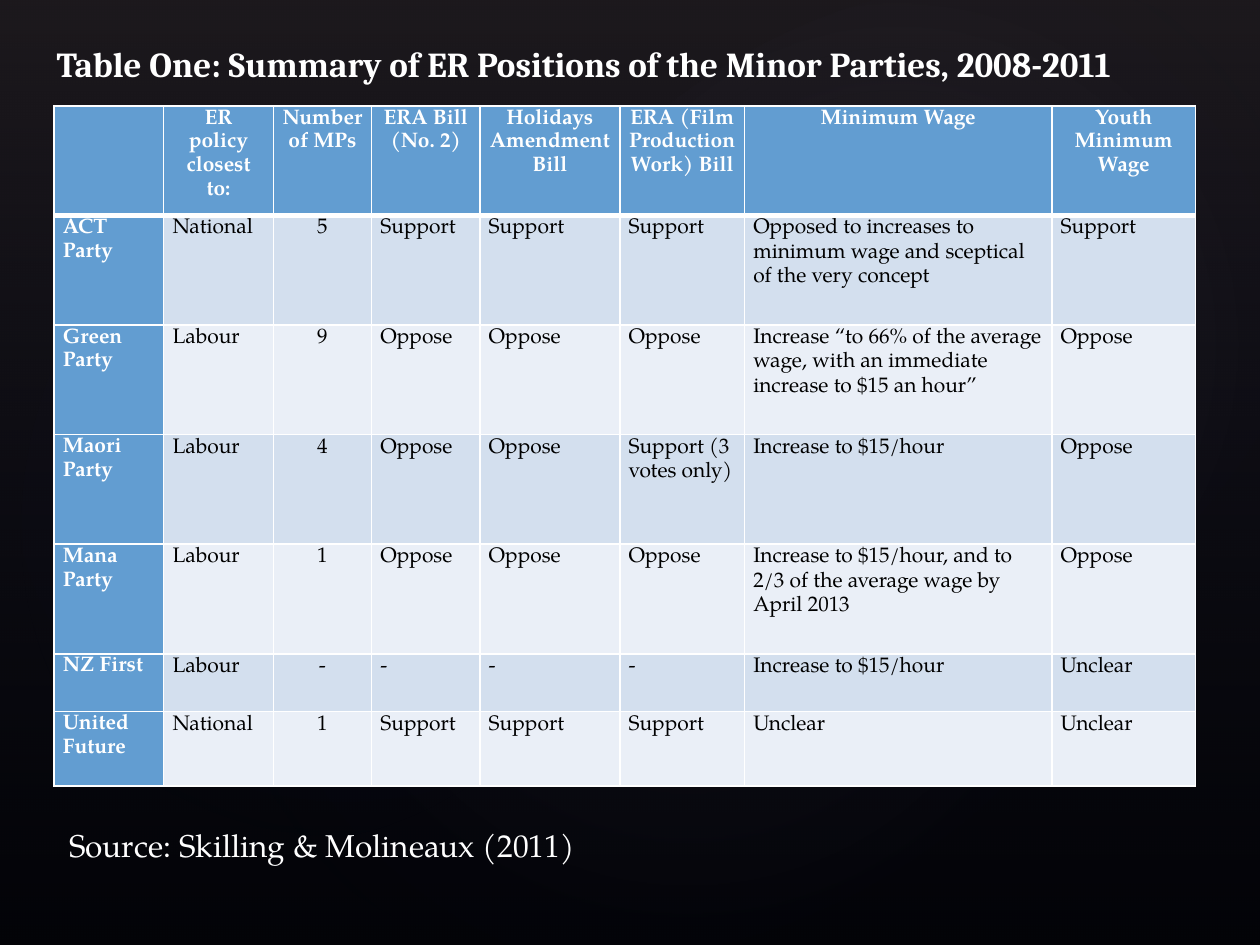
from pptx import Presentation
from pptx.dml.color import RGBColor
from pptx.enum.shapes import MSO_SHAPE as Shape
from pptx.enum.text import MSO_ANCHOR as Anchor, PP_ALIGN as Align
from pptx.oxml import parse_xml
from pptx.oxml.ns import nsdecls, qn
from pptx.util import Inches, Pt

COLORS = {
    "black": "000000", "white": "FFFFFF", "header": "629DD1",
    "odd": "D3DFEE", "even": "EAEFF7",
    "top": "504652", "navy": "242852", "glow": "C4BCC6",
}
BODY_FONT = "TeX Gyre Pagella"
TITLE_FONT = "Cambria"

LINEAR = '<a:lin ang="5400000" scaled="0"/>'
RADIAL = ('<a:path path="circle">'
          '<a:fillToRect l="50000" t="50000" r="50000" b="50000"/></a:path>')

# Left, top, width, height, rotation, opacity at the centre
GLOWS = [
    (1.5, 1.14, 7.92, 6.24, 328.7, 7),
    (-0.3, 1.28, 6.06, 4.9, 294.3, 8),
    (3.58, 0.13, 7.09, 5.2, 328.7, 8),
]

COLUMN_WIDTHS = [0.87, 0.87, 0.78, 0.86, 1.11, 0.99, 2.44, 1.14]
ROW_HEIGHTS = [0.87] * 5 + [0.46, 0.59]
COUNT_COLUMN = 2
POSITIONS = [
    ["", "ER policy closest to:", "Number of MPs", "ERA Bill (No. 2)",
     "Holidays Amendment Bill", "ERA (Film Production Work) Bill",
     "Minimum Wage", "Youth Minimum Wage"],
    ["ACT Party", "National", "5", "Support", "Support", "Support",
     "Opposed to increases to minimum wage and sceptical of the very concept",
     "Support"],
    ["Green Party", "Labour", "9", "Oppose", "Oppose", "Oppose",
     "Increase “to 66% of the average wage, with an immediate increase "
     "to $15 an hour”", "Oppose"],
    ["Maori Party", "Labour", "4", "Oppose", "Oppose",
     "Support (3 votes only)", "Increase to $15/hour", "Oppose"],
    ["Mana Party", "Labour", "1", "Oppose", "Oppose", "Oppose",
     "Increase to $15/hour, and to 2/3 of the average wage by April 2013",
     "Oppose"],
    ["NZ First", "Labour", "-", "-", "-", "-", "Increase to $15/hour",
     "Unclear"],
    ["United Future", "National", "1", "Support", "Support", "Support",
     "Unclear", "Unclear"],
]


def rgb(name):
    return RGBColor.from_string(COLORS[name])


class SlideBuilder:
    def __init__(self, page):
        self.page = page
        page.background.fill.solid()
        page.background.fill.fore_color.rgb = rgb("black")

    def style(self, para, font, size, color="white", bold=False):
        para.font.name = font
        para.font.size = Pt(size)
        para.font.bold = bold
        para.font.color.rgb = rgb(color)

    def gradient_shape(self, kind, place, stops, direction, rotation=0):
        """Stops are (position %, colour name, opacity %)."""
        shape = self.page.shapes.add_shape(kind, *map(Inches, place))
        shape.rotation = rotation
        shape.shadow.inherit = False
        shape.line.fill.background()
        marks = "".join(
            f'<a:gs pos="{position * 1000}"><a:srgbClr val="{COLORS[color]}">'
            f'<a:alpha val="{opacity * 1000}"/></a:srgbClr></a:gs>'
            for position, color, opacity in stops)
        geometry = shape.element.spPr.find(qn("a:prstGeom"))
        geometry.addnext(parse_xml(
            f'<a:gradFill {nsdecls("a")} rotWithShape="1">'
            f'<a:gsLst>{marks}</a:gsLst>{direction}</a:gradFill>'))

    def border(self, cell, side, width):
        properties = cell._tc.get_or_add_tcPr()
        line = parse_xml(
            f'<a:{side} {nsdecls("a")} w="{Pt(width)}"><a:solidFill>'
            f'<a:srgbClr val="{COLORS["white"]}"/></a:solidFill></a:{side}>')
        properties.append(line)

    def cell(self, cell, text, row, column):
        heading = row == 0 or column == 0
        cell.margin_left = cell.margin_right = Inches(0.07)
        cell.margin_top = cell.margin_bottom = 0
        cell.text = text
        para = cell.text_frame.paragraphs[0]
        centred = row == 0 or column == COUNT_COLUMN
        para.alignment = Align.CENTER if centred else Align.LEFT
        para.line_spacing = 1.15
        para.space_after = Pt(3)
        self.style(para, BODY_FONT, 12, "white" if heading else "black", heading)
        # Borders come before the fill in the cell properties
        for side in ("lnL", "lnR", "lnT", "lnB"):
            thick = (row, side) in ((0, "lnB"), (1, "lnT"))
            self.border(cell, side, 3 if thick else 1)
        cell.fill.solid()
        band = "odd" if row % 2 else "even"
        cell.fill.fore_color.rgb = rgb("header" if heading else band)

    def table(self, left, top, widths, heights, rows):
        frame = self.page.shapes.add_table(
            len(heights), len(widths), Inches(left), Inches(top),
            Inches(sum(widths)), Inches(sum(heights)))
        table = frame.table
        for column, width in zip(table.columns, widths):
            column.width = Inches(width)
        for line, height in zip(table.rows, heights):
            line.height = Inches(height)
        for row, texts in enumerate(rows):
            for column, text in enumerate(texts):
                self.cell(table.cell(row, column), text, row, column)

    def title(self, text, place):
        box = self.page.shapes.title
        box.left, box.top, box.width, box.height = map(Inches, place)
        frame = box.text_frame
        frame.text = text
        frame.word_wrap = True
        frame.vertical_anchor = Anchor.TOP
        frame.margin_top = Inches(0.17)
        frame.margin_bottom = Inches(0.04)
        para = frame.paragraphs[0]
        para.alignment = Align.LEFT
        self.style(para, TITLE_FONT, 20, bold=True)
        # Bring the title in front of the backdrop
        self.page.shapes.element.append(box.element)

    def text(self, text, place):
        box = self.page.shapes.add_textbox(*map(Inches, place))
        box.text_frame.word_wrap = True
        box.text_frame.text = text
        self.style(box.text_frame.paragraphs[0], BODY_FONT, 18)


def main():
    deck = Presentation()
    deck.slide_width, deck.slide_height = Inches(10), Inches(7.5)
    builder = SlideBuilder(deck.slides.add_slide(deck.slide_layouts[5]))

    # Backdrop
    builder.gradient_shape(Shape.RECTANGLE, (0, 0, 10, 7.5),
                           [(0, "top", 36), (100, "navy", 10)], LINEAR)
    for *place, rotation, opacity in GLOWS:
        builder.gradient_shape(Shape.OVAL, place,
                               [(0, "glow", opacity), (58, "navy", 0)],
                               RADIAL, rotation)

    # Content
    builder.table(0.43, 0.84, COLUMN_WIDTHS, ROW_HEIGHTS, POSITIONS)
    builder.title("Table One: Summary of ER Positions of the Minor Parties, "
                  "2008-2011", (0.35, 0.17, 9.13, 0.85))
    builder.text("Source: Skilling & Molineaux (2011)", (0.45, 6.51, 6.25, 0.4))

    deck.save("out.pptx")


if __name__ == "__main__":
    main()
